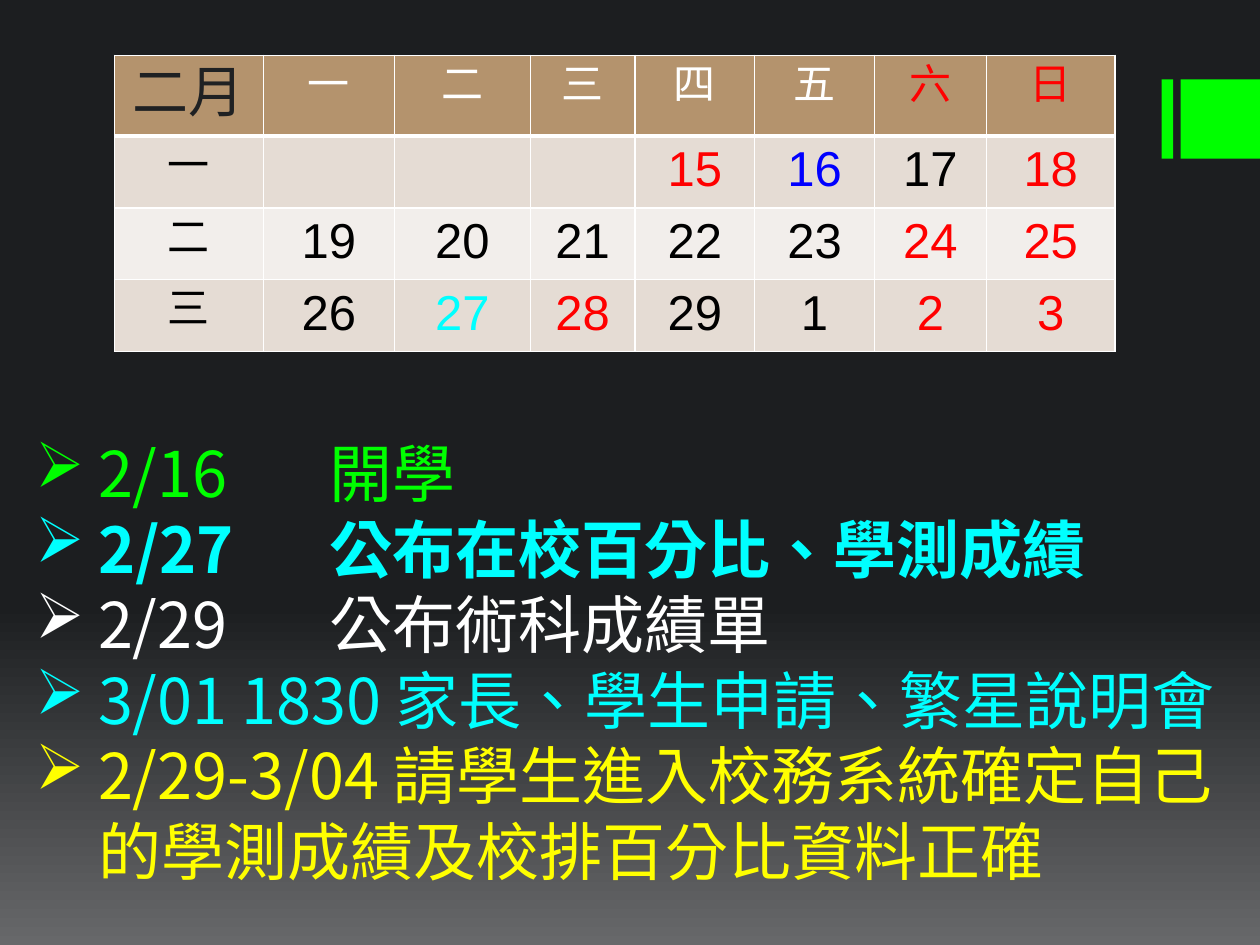
from copy import deepcopy
from lxml.etree import SubElement
from pptx import Presentation
from pptx.dml.color import RGBColor
from pptx.enum.lang import MSO_LANGUAGE_ID
from pptx.enum.shapes import MSO_SHAPE
from pptx.enum.text import PP_ALIGN
from pptx.oxml.ns import qn
from pptx.util import Inches, Pt

# The page is a grid of 100 columns by 75 rows of square units
UNIT = Inches(0.1)
color = RGBColor.from_string


def units(*counts):
    return [int(count * UNIT) for count in counts]


def style(span, font, size, hex_color, bold=False):
    span.font.name = font
    span.font.size = Pt(size)
    span.font.bold = bold
    span.font.color.rgb = color(hex_color)
    span.font.language_id = MSO_LANGUAGE_ID.TRADITIONAL_CHINESE
    SubElement(span.font._element, qn("a:ea"), typeface=font)


deck = Presentation()
deck.slide_width, deck.slide_height = units(100, 75)
page = deck.slides.add_slide(deck.slide_layouts[6])

# Background: dark at the top, grey at the bottom
fill = page.background.fill
fill.gradient()
fill.gradient_angle = 270
stop_list = page.element.find(".//" + qn("a:gsLst"))
stop_list.append(deepcopy(stop_list[0]))
shades = [(0, "1C1E20"), (0.65, "1E2022"), (1, "67686A")]
for stop, (position, shade) in zip(fill.gradient_stops, shades):
    stop.position = position
    stop.color.rgb = color(shade)

# Green bars at the right edge
for left, width in [(92.2, 0.9), (93.7, 6.3)]:
    bar = page.shapes.add_shape(MSO_SHAPE.RECTANGLE, *units(left, 6.3, width, 6.3))
    bar.shadow.inherit = False
    bar.fill.solid()
    bar.fill.fore_color.rgb = color("00FF00")
    bar.line.fill.background()

# Calendar
calendar = [
    ["二月", "一", "二", "三", "四", "五", "六", "日"],
    ["一", "", "", "", "15", "16", "17", "18"],
    ["二", "19", "20", "21", "22", "23", "24", "25"],
    ["三", "26", "27", "28", "29", "1", "2", "3"],
]
holidays = {"六", "日", "15", "18", "24", "25", "28", "2", "3"}
special_colors = {"二月": "1F2123", "16": "0000FF", "27": "00FFFF"}
row_fills = ["B4936D", "E5DCD4", "F2EEEB", "E5DCD4"]
column_widths = units(11.8, 10.4, 10.8, 8.3, 9.5, 9.5, 8.9, 10.2)
row_heights = units(6.4, 5.7, 5.7, 5.7)

table = page.shapes.add_table(
    len(calendar), len(calendar[0]), *units(9.1, 4.4), sum(column_widths), sum(row_heights)
).table
for column, width in zip(table.columns, column_widths):
    column.width = width
for row, height in zip(table.rows, row_heights):
    row.height = height

for row_index, labels in enumerate(calendar):
    for column_index, label in enumerate(labels):
        cell = table.cell(row_index, column_index)
        # Borders come before the fill in the cell properties
        properties = cell._tc.get_or_add_tcPr()
        for side in ("a:lnL", "a:lnR", "a:lnT", "a:lnB"):
            points = 3 if row_index == 0 and side == "a:lnB" else 1
            border = SubElement(properties, qn(side), w=str(Pt(points)))
            SubElement(SubElement(border, qn("a:solidFill")), qn("a:srgbClr"), val="FFFFFF")
        cell.fill.solid()
        cell.fill.fore_color.rgb = color(row_fills[row_index])
        if not label:
            continue
        cell.text_frame.text = label
        para = cell.text_frame.paragraphs[0]
        para.alignment = PP_ALIGN.CENTER
        size = 32 if label == "二月" else 28 if label.isdigit() else 24
        text_color = "FFFFFF" if row_index == 0 else "000000"
        if label in holidays:
            text_color = "FF0000"
        style(para.runs[0], "Arial", size, special_colors.get(label, text_color))

# Dated announcements, with a tab stop after the short dates
notices = [
    ("2/16\t開學", "00FF00", False),
    ("2/27\t公布在校百分比、學測成績", "00FFFF", True),
    ("2/29\t公布術科成績單", "FFFFFF", False),
    ("3/01 1830 家長、學生申請、繁星說明會", "00FFFF", False),
    ("2/29-3/04 請學生進入校務系統確定自己的學測成績及校排百分比資料正確", "FFFF00", False),
]
indent, tab_stop = units(5, 23.4)
box = page.shapes.add_textbox(*units(1.8, 34, 97.1, 37.4))
frame = box.text_frame
frame.word_wrap = True
for index, (notice, text_color, bold) in enumerate(notices):
    para = frame.paragraphs[0] if index == 0 else frame.add_paragraph()
    para.text = notice
    properties = para._p.get_or_add_pPr()
    properties.set("marL", str(indent))
    properties.set("indent", str(-indent))
    SubElement(properties, qn("a:buChar"), char="➢")
    if "\t" in notice:
        tabs = SubElement(properties, qn("a:tabLst"))
        SubElement(tabs, qn("a:tab"), pos=str(tab_stop), algn="l")
    for span in para.runs:
        style(span, "Noto Sans CJK SC", 36, text_color, bold)

deck.save("out.pptx")
